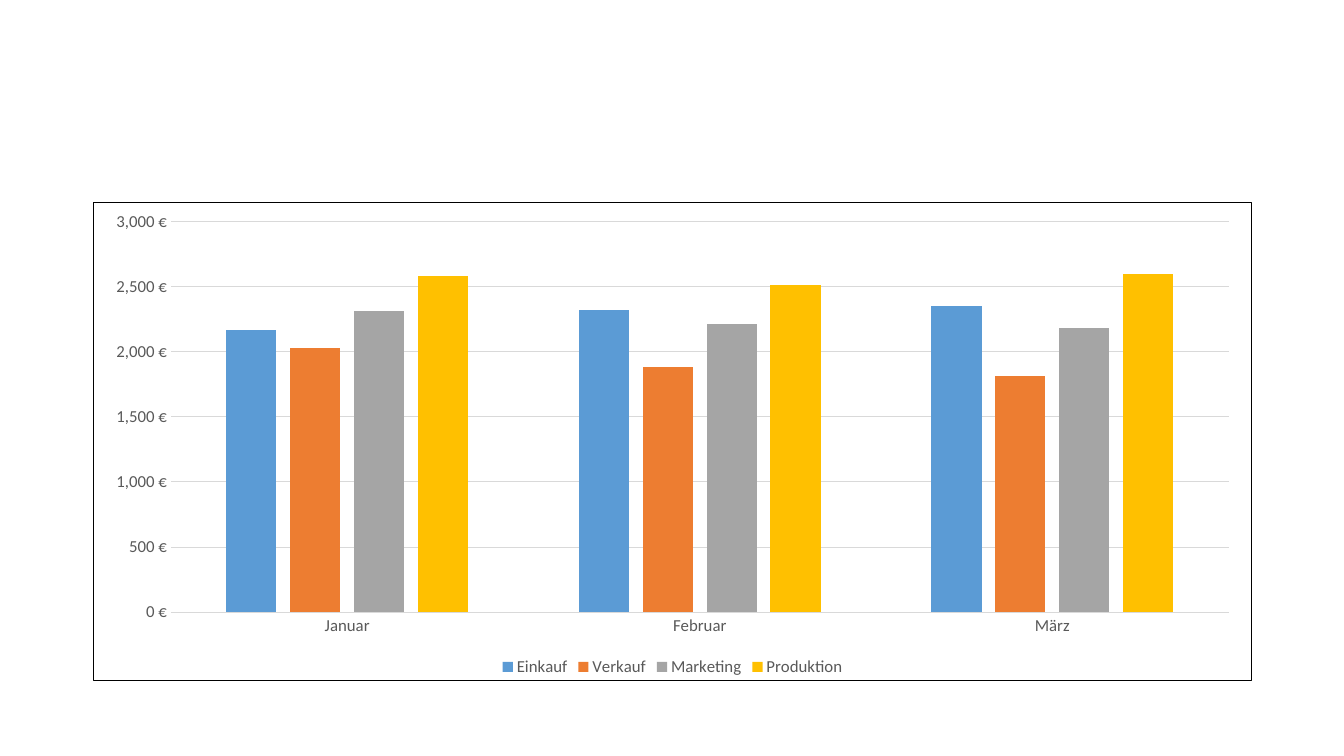
from pptx import Presentation
from pptx.chart.data import CategoryChartData
from pptx.dml.color import RGBColor
from pptx.enum.chart import XL_CHART_TYPE, XL_LEGEND_POSITION, XL_TICK_MARK
from pptx.oxml import parse_xml
from pptx.oxml.ns import nsdecls, qn
from pptx.util import Inches, Pt

BLACK = RGBColor(0x00, 0x00, 0x00)
TEXT = RGBColor(0x59, 0x59, 0x59)
GRID = RGBColor(0xD9, 0xD9, 0xD9)
BLUE = RGBColor(0x5B, 0x9B, 0xD5)
ORANGE = RGBColor(0xED, 0x7D, 0x31)
GRAY = RGBColor(0xA5, 0xA5, 0xA5)
YELLOW = RGBColor(0xFF, 0xC0, 0x00)

MONTHS = ["Januar", "Februar", "März"]
COSTS = [
    ("Einkauf", [2170, 2320, 2350], BLUE),
    ("Verkauf", [2030, 1880, 1810], ORANGE),
    ("Marketing", [2310, 2210, 2180], GRAY),
    ("Produktion", [2580, 2510, 2600], YELLOW),
]
EURO = '#,##0\\ "€"'

prs = Presentation()
prs.slide_width = Inches(13.33)
prs.slide_height = Inches(7.5)
slide = prs.slides.add_slide(prs.slide_layouts[6])

# Chart with its data
data = CategoryChartData(number_format=EURO)
data.categories = MONTHS
for name, vals, color in COSTS:
    data.add_series(name, vals)
chart = slide.shapes.add_chart(
    XL_CHART_TYPE.COLUMN_CLUSTERED,
    Inches(0.92), Inches(2), Inches(11.5), Inches(4.76), data).chart
chart.has_title = False
chart.font.name = "Calibri"
chart.font.size = Pt(10)
chart.font.color.rgb = BLACK

# Columns
plot = chart.plots[0]
plot.vary_by_categories = False
plot.gap_width = 219
plot.overlap = -27
for series, (name, vals, color) in zip(plot.series, COSTS):
    series.format.fill.solid()
    series.format.fill.fore_color.rgb = color

# Axes and gridlines
months, euros = chart.category_axis, chart.value_axis
for axis in (months, euros):
    axis.major_tick_mark = XL_TICK_MARK.NONE
    axis.minor_tick_mark = XL_TICK_MARK.NONE
euros.minimum_scale = 0
euros.maximum_scale = 3000
euros.major_unit = 500
euros.tick_labels.number_format = EURO
euros.tick_labels.number_format_is_linked = False
euros.format.line.fill.background()
euros.has_major_gridlines = True
for line in (months.format.line, euros.major_gridlines.format.line):
    line.color.rgb = GRID
    line.width = Pt(0.75)

# Legend
chart.has_legend = True
chart.legend.position = XL_LEGEND_POSITION.BOTTOM
chart.legend.include_in_layout = False

# Label fonts
for font in (months.tick_labels.font, euros.tick_labels.font, chart.legend.font):
    font.name = "Calibri"
    font.size = Pt(12)
    font.color.rgb = TEXT

# Border around the chart
frame = parse_xml(
    f'<c:spPr {nsdecls("c", "a")}><a:noFill/><a:ln w="{Pt(0.75)}"><a:solidFill>'
    f'<a:srgbClr val="{BLACK}"/></a:solidFill></a:ln></c:spPr>')
chart.element.find(qn("c:chart")).addnext(frame)

prs.save("out.pptx")
